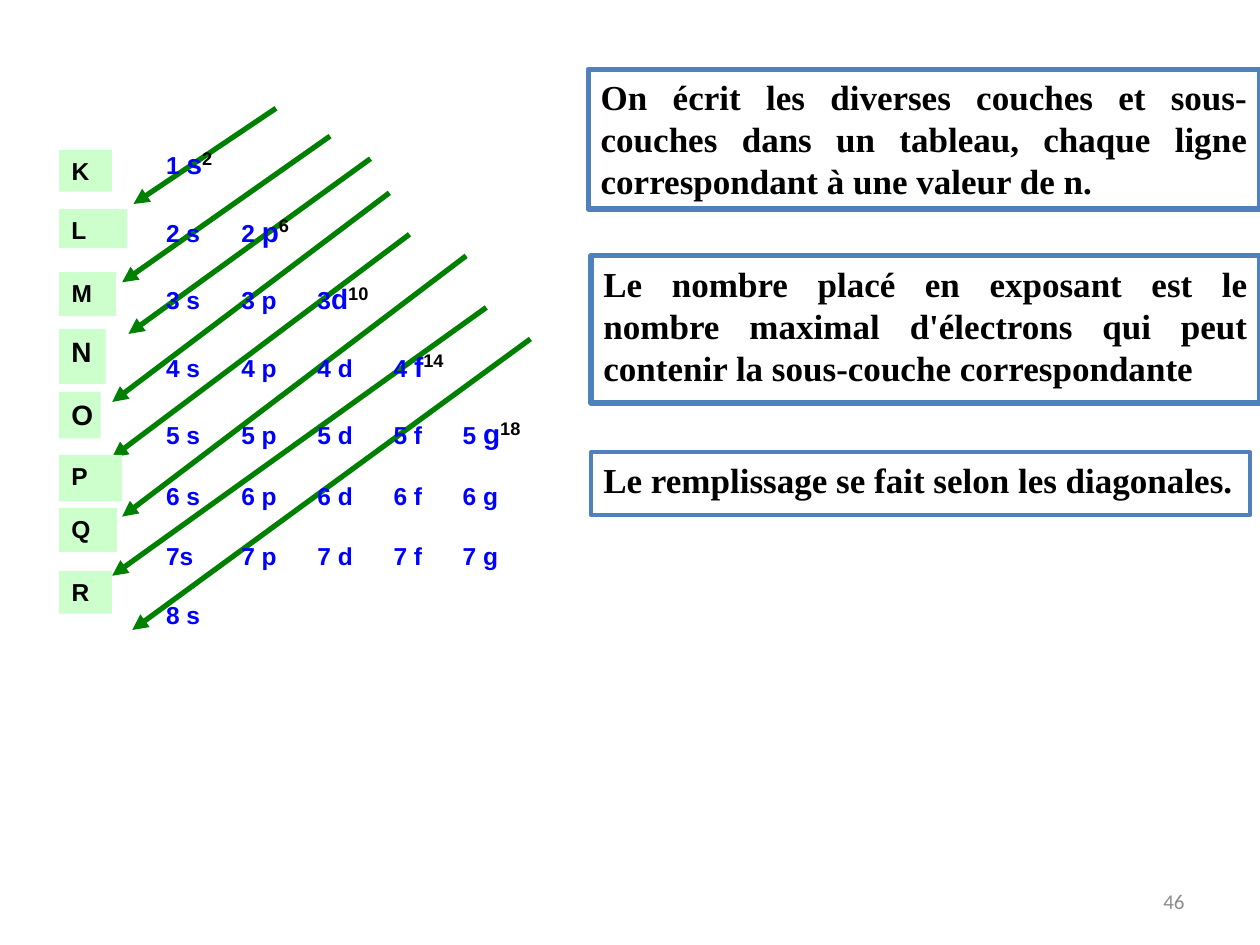
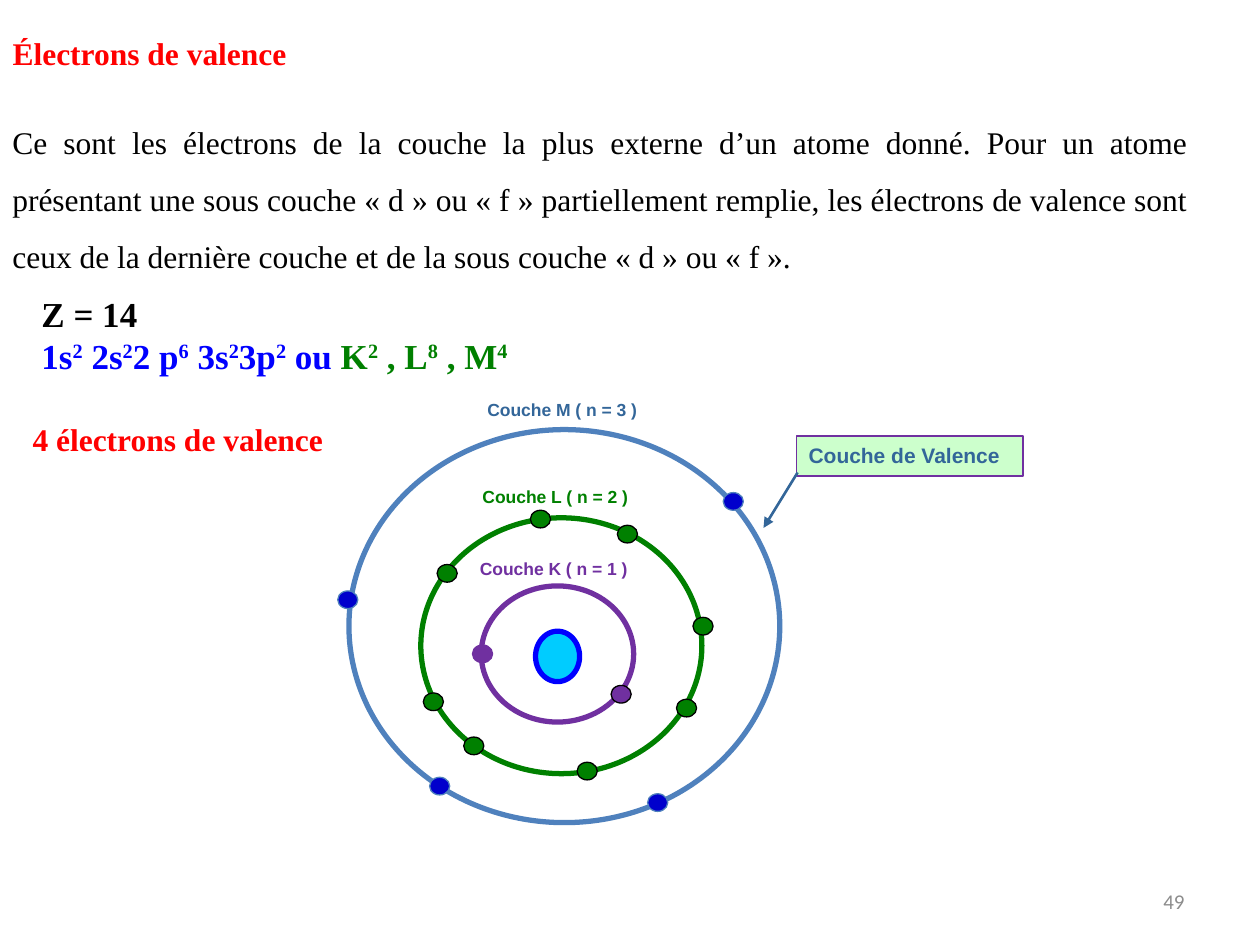
from dataclasses import dataclass
from typing import NamedTuple, Optional

from lxml import etree
from pptx import Presentation
from pptx.dml.color import RGBColor
from pptx.enum.shapes import MSO_CONNECTOR, MSO_SHAPE
from pptx.enum.text import MSO_ANCHOR, MSO_AUTO_SIZE, PP_ALIGN
from pptx.oxml.ns import qn
from pptx.util import Pt

RECTANGLE, OVAL = MSO_SHAPE.RECTANGLE, MSO_SHAPE.OVAL
STRAIGHT = MSO_CONNECTOR.STRAIGHT
TOP, MIDDLE = MSO_ANCHOR.TOP, MSO_ANCHOR.MIDDLE
LEFT, RIGHT, JUSTIFY = PP_ALIGN.LEFT, PP_ALIGN.RIGHT, PP_ALIGN.JUSTIFY
NO_AUTOFIT = MSO_AUTO_SIZE.NONE
TITLE_ONLY, BLANK = 5, 6


@dataclass(frozen=True)
class Theme:
    """Colours, fonts and type sizes of both slides."""
    black: str = "000000"
    white: str = "FFFFFF"
    red: str = "FF0000"
    blue: str = "0000FF"
    green: str = "008000"
    purple: str = "7030A0"
    steel: str = "4F81BD"
    slate: str = "336699"
    navy: str = "0000CC"
    cyan: str = "00CCFF"
    mint: str = "CCFFCC"
    grey: str = "8C8C8C"
    serif: str = "Times New Roman"
    sans: str = "Arial"
    plain: str = "Calibri"
    statement: float = 20
    body: float = 18
    letter: float = 16
    level: float = 14
    small: float = 12
    caption: float = 10


THEME = Theme()


class Box(NamedTuple):
    """Left, top, width and height in points."""
    left: float
    top: float
    width: float
    height: float


class Style(NamedTuple):
    """Look of a run of text."""
    font: str
    size: float
    color: str
    bold: bool = True


class Span(NamedTuple):
    """A run of text with its style."""
    text: str
    style: Style
    raised: bool = False


class Arrow(NamedTuple):
    """Start and end of an arrow in points."""
    x1: float
    y1: float
    x2: float
    y2: float


class Level(NamedTuple):
    """Label of a main shell beside the table."""
    name: str
    top: float
    width: float
    height: float
    size: float = THEME.level


class Row(NamedTuple):
    """Subshells of one value of n, the last with its capacity."""
    subshells: str
    newest: str = ""
    capacity: str = ""


class Orbit(NamedTuple):
    """An electron shell with its caption and electrons."""
    name: str
    ring: Box
    color: str
    caption: Box
    caption_color: str
    electron_fill: str
    electron_lines: tuple
    electrons: tuple


STATEMENT = Style(THEME.serif, THEME.statement, THEME.black)
HEADING = Style(THEME.serif, THEME.body, THEME.red)
BODY = Style(THEME.serif, THEME.body, THEME.black, False)
SUBSHELL = Style(THEME.sans, THEME.level, THEME.blue)
PAGE_NUMBER = Style(THEME.plain, THEME.small, THEME.grey, False)

RULES = (
    (Box(337.7, 258.5, 376.6, 36), 2.25, LEFT, "Le remplissage se fait selon les diagonales."),
    (Box(337.7, 146.2, 382.3, 84.2), 3, JUSTIFY,
     "Le nombre placé en exposant est le nombre maximal d'électrons qui peut contenir "
     "la sous-couche correspondante"),
    (Box(336.2, 39.6, 383.8, 79.9), 3, JUSTIFY,
     "On écrit les diverses couches et sous-couches dans un tableau, chaque ligne "
     "correspondant à une valeur de n."),
)
DIAGONALS = (
    Arrow(157.7, 61.9, 76.3, 116.6), Arrow(188.6, 77.8, 69.8, 161.3),
    Arrow(211.7, 90.7, 73.4, 190.8), Arrow(222.5, 110.2, 64.1, 229.7),
    Arrow(234, 133.9, 64.1, 261.4), Arrow(266.4, 146.2, 69.8, 295.2),
    Arrow(277.9, 175.7, 64.1, 329), Arrow(303.1, 193.7, 75.6, 360),
)
LEVELS = (
    Level("K", 85.7, 30.2, 23.8), Level("L", 119.5, 38.9, 22.3),
    Level("M", 155.5, 32.4, 25.2), Level("N", 187.9, 26.6, 31.7, THEME.letter),
    Level("O", 223.9, 23.8, 26.6, THEME.letter), Level("P", 259.9, 36, 26.6),
    Level("Q", 290.2, 33.1, 25.2), Level("R", 326.2, 30.2, 24.5),
)
ROWS = (
    Row("1 ", "s", "2"),
    Row("2 s\t2 ", "p", "6"),
    Row("3 s\t3 p\t3", "d", "10"),
    Row("4 s\t4 p\t4 d\t4 ", "f", "14"),
    Row("5 s\t5 p\t5 d\t5 f\t5 ", "g", "18"),
    Row("6 s\t6 p\t6 d\t6 f\t6 g"),
    Row("7s\t7 p\t7 d\t7 f\t7 g"),
    Row("8 s"),
)
SUBSHELL_TABS = (43, 86.5, 130, 169.5)
TALL_ROW, SHORT_ROW = 38.6, 34

NUCLEUS = Box(306, 360.7, 25.2, 28.8)
ELECTRON_WIDTH, ELECTRON_HEIGHT = 11.5, 10.1
ORBITS = (
    Orbit("Couche K ( n = 1 )", Box(275, 334.8, 87.1, 77.8), THEME.purple,
          Box(267.1, 315.4, 119.5, 16.6), THEME.purple, THEME.purple,
          (THEME.purple, THEME.black), ((270, 368.6), (349.2, 391.7))),
    Orbit("Couche L ( n = 2 )", Box(240.5, 295.9, 160.6, 146.2), THEME.green,
          Box(268.6, 274.3, 138.2, 23), THEME.green, THEME.green, (THEME.black,) * 8,
          ((241.9, 396), (265, 421.2), (352.8, 300.2), (396, 352.8),
           (249.8, 322.6), (329.8, 435.6), (303.1, 291.6), (386.6, 399.6))),
    Orbit("Couche M ( n = 3 )", Box(199.4, 245.5, 246.2, 224.6), THEME.steel,
          Box(271.4, 224.6, 198, 25.2), THEME.slate, THEME.navy, (THEME.steel,) * 4,
          ((245.5, 444.2), (370.1, 453.6), (193, 337.7), (413.3, 281.5))),
)


def points(values: tuple) -> list:
    """Turn numbers into point lengths."""
    return [Pt(value) for value in values]


def format_run(run, style: Style, raised: bool = False) -> None:
    """Apply a style to a run."""
    run.font.name, run.font.size, run.font.bold = style.font, Pt(style.size), style.bold
    run.font.color.rgb = RGBColor.from_string(style.color)
    if raised:
        run.font._element.set("baseline", "30000")


def write_spans(paragraph, spans: list) -> None:
    """Add styled runs to a paragraph."""
    for span in spans:
        run = paragraph.add_run()
        run.text = span.text
        format_run(run, span.style, span.raised)


def write_text(shape, text: str, style: Style, align=LEFT, anchor=TOP):
    """Fill a shape with one styled paragraph."""
    frame = shape.text_frame
    frame.text = text
    frame.word_wrap, frame.auto_size, frame.vertical_anchor = True, NO_AUTOFIT, anchor
    paragraph = frame.paragraphs[0]
    paragraph.alignment = align
    for run in paragraph.runs:
        format_run(run, style)
    return paragraph


def add_text(slide, box: Box, text: str, style: Style, align=LEFT, anchor=TOP):
    """Add a text box with one paragraph."""
    return write_text(slide.shapes.add_textbox(*points(box)), text, style, align, anchor)


def add_figure(slide, kind, box: Box, fill: Optional[str], line: Optional[str], weight: float = 0.75):
    """Add a flat shape, without fill or line where none is given."""
    figure = slide.shapes.add_shape(kind, *points(box))
    figure.shadow.inherit = False
    if fill:
        figure.fill.solid()
        figure.fill.fore_color.rgb = RGBColor.from_string(fill)
    else:
        figure.fill.background()
    if line:
        figure.line.color.rgb = RGBColor.from_string(line)
        figure.line.width = Pt(weight)
    else:
        figure.line.fill.background()
    return figure


def add_arrow(slide, arrow: Arrow, color: str, weight: float) -> None:
    """Add a line with a triangle at its end."""
    connector = slide.shapes.add_connector(STRAIGHT, *points(arrow))
    connector.line.color.rgb = RGBColor.from_string(color)
    connector.line.width = Pt(weight)
    etree.SubElement(connector.line._get_or_add_ln(), qn("a:tailEnd"), type="triangle")
    etree.SubElement(connector._element.spPr, qn("a:effectLst"))


def add_page_number(slide, number: int) -> None:
    """Add the footer number."""
    add_text(slide, Box(516.2, 500.4, 167.8, 28.8), str(number), PAGE_NUMBER, RIGHT, MIDDLE)


def add_subshell_rows(slide) -> None:
    """Write the subshells, one line for each n, in tabbed columns."""
    frame = slide.shapes.add_textbox(*points(Box(87.8, 61.2, 231.8, 297))).text_frame
    frame.word_wrap = True
    for index, row in enumerate(ROWS):
        paragraph = frame.add_paragraph() if index else frame.paragraphs[0]
        paragraph.alignment = LEFT
        paragraph.line_spacing = Pt(TALL_ROW if row.capacity else SHORT_ROW)
        tabs = etree.SubElement(paragraph._p.get_or_add_pPr(), qn("a:tabLst"))
        for stop in SUBSHELL_TABS:
            etree.SubElement(tabs, qn("a:tab"), pos=str(Pt(stop)), algn="l")
        spans = [Span(row.subshells, SUBSHELL)]
        if row.capacity:
            spans += [Span(row.newest, SUBSHELL._replace(size=THEME.letter)),
                      Span(row.capacity, SUBSHELL._replace(size=THEME.body, color=THEME.black), True)]
        write_spans(paragraph, spans)


def configuration(notation: str, color: str) -> list:
    """Split a notation whose every second part is an exponent."""
    style = STATEMENT._replace(color=color)
    return [Span(part, style, index % 2 == 1) for index, part in enumerate(notation.split("|")) if part]


def add_orbit(slide, orbit: Orbit) -> None:
    """Draw a shell, its caption and its electrons."""
    add_figure(slide, OVAL, orbit.ring, None, orbit.color, 3)
    add_text(slide, orbit.caption, orbit.name, Style(THEME.sans, THEME.caption, orbit.caption_color))
    for (left, top), line in zip(orbit.electrons, orbit.electron_lines):
        electron = Box(left, top, ELECTRON_WIDTH, ELECTRON_HEIGHT)
        add_figure(slide, OVAL, electron, orbit.electron_fill, line)


def build_filling_slide(deck) -> None:
    """Build the slide on the filling order of subshells."""
    slide = deck.slides.add_slide(deck.slide_layouts[BLANK])
    for box, weight, align, rule in RULES:
        write_text(add_figure(slide, RECTANGLE, box, THEME.white, THEME.steel, weight),
                   rule, STATEMENT, align)
    for diagonal in DIAGONALS:
        add_arrow(slide, diagonal, THEME.green, 3)
    add_subshell_rows(slide)
    for level in LEVELS:
        box = Box(33.8, level.top, level.width, level.height)
        write_text(add_figure(slide, RECTANGLE, box, THEME.mint, None), level.name,
                   Style(THEME.sans, level.size, THEME.black))
    add_page_number(slide, 46)


def build_valence_slide(deck) -> None:
    """Build the slide on valence electrons."""
    slide = deck.slides.add_slide(deck.slide_layouts[TITLE_ONLY])
    title = slide.shapes.title
    title.left, title.top, title.width, title.height = points(Box(0, 15.8, 540, 28.8))
    write_text(title, "Électrons de valence", HEADING)
    definition = add_text(
        slide, Box(0, 56.2, 686.2, 101.5),
        "Ce sont les électrons de la couche la plus externe d’un atome donné. Pour un atome "
        "présentant une sous couche « d » ou « f » partiellement remplie, les électrons de valence "
        "sont ceux de la dernière couche et de la sous couche « d » ou « f ».", BODY, JUSTIFY)
    definition.line_spacing = 1.5

    silicon = slide.shapes.add_textbox(*points(Box(16.6, 163.4, 684, 55.4)))
    write_text(silicon, "Z = 14", STATEMENT)
    write_spans(silicon.text_frame.add_paragraph(),
                configuration("1s|2| 2s|2|2 p|6| 3s|2|3p|2| ou ", THEME.blue)
                + configuration("K|2| , L|8| , M|4", THEME.green))
    add_text(slide, Box(11.5, 236.2, 202.3, 28.8), "4 électrons de valence", HEADING)

    add_figure(slide, OVAL, NUCLEUS, THEME.cyan, THEME.blue, 3)
    for orbit in ORBITS:
        add_orbit(slide, orbit)
    valence_shell = add_figure(slide, RECTANGLE, Box(455, 249.1, 129.6, 23), THEME.mint, THEME.purple)
    write_text(valence_shell, "Couche de Valence", Style(THEME.sans, THEME.small, THEME.slate))
    add_arrow(slide, Arrow(455.8, 270, 436.3, 301.7), THEME.slate, 1.5)
    add_page_number(slide, 49)


def main() -> None:
    """Build and save the deck."""
    deck = Presentation()
    deck.slide_width, deck.slide_height = Pt(720), Pt(540)
    build_filling_slide(deck)
    build_valence_slide(deck)
    deck.save("out.pptx")


if __name__ == "__main__":
    main()
